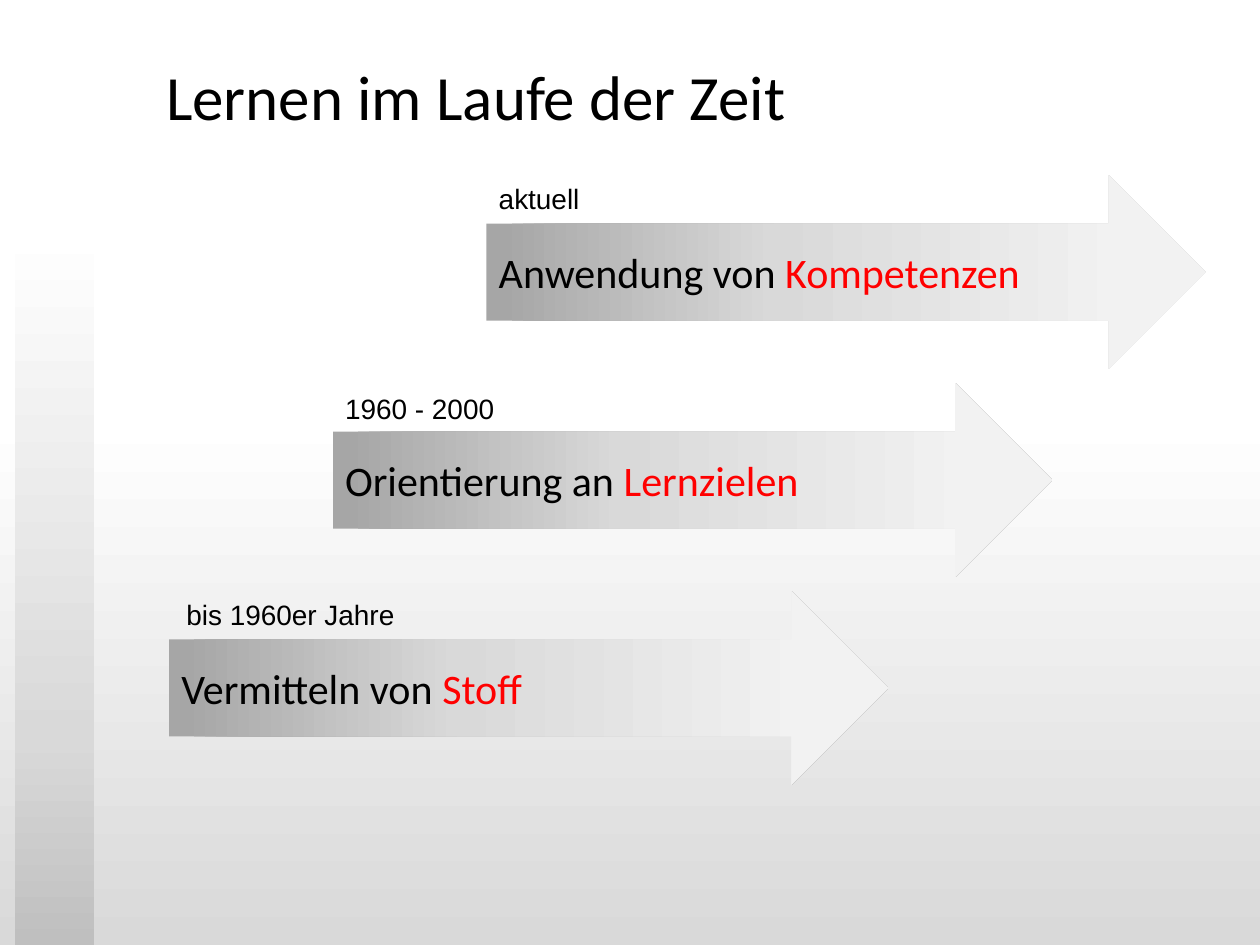
from copy import deepcopy

from pptx import Presentation
from pptx.dml.color import RGBColor
from pptx.enum.shapes import MSO_SHAPE
from pptx.enum.text import MSO_ANCHOR, PP_ALIGN
from pptx.oxml.ns import qn
from pptx.util import Pt

RECTANGLE = MSO_SHAPE.RECTANGLE
RIGHT_ARROW = MSO_SHAPE.RIGHT_ARROW
MIDDLE = MSO_ANCHOR.MIDDLE
TOP = MSO_ANCHOR.TOP
LEFT = PP_ALIGN.LEFT

BLACK = RGBColor(0x00, 0x00, 0x00)
RED = RGBColor(0xFF, 0x00, 0x00)
WHITE = RGBColor(0xFF, 0xFF, 0xFF)
PALE = RGBColor(0xF2, 0xF2, 0xF2)
LIGHT = RGBColor(0xD9, 0xD9, 0xD9)
SILVER = RGBColor(0xBF, 0xBF, 0xBF)
GREY = RGBColor(0xA6, 0xA6, 0xA6)

BACKGROUND_STOPS = [(0, WHITE), (0.44, WHITE), (1, LIGHT)]
BAR_STOPS = [(0.24, WHITE), (0.78, LIGHT), (1, SILVER)]
ARROW_STOPS = [(0.02, GREY), (0.4, LIGHT), (0.89, PALE)]
DOWN, ACROSS = 270, 0

ARROW_TOP, ARROW_STEP = 100.1, 118.8
ARROW_WIDTH, ARROW_HEIGHT = 411.1, 110.9
LABEL_HEIGHT = 26.6

# Each era: arrow left, label left, label top offset, label width, label, lead, keyword
ERAS = [
    (277.9, 277.9, 0, 121.7, "aktuell", "Anwendung von ", "Kompetenzen"),
    (190.1, 190.1, 1.4, 121.7, "1960 - 2000", "Orientierung an ", "Lernzielen"),
    (96.5, 99.4, 0, 150.5, "bis 1960er Jahre", "Vermitteln von ", "Stoff"),
]


def paint_gradient(fill, element, stops, angle):
    """Give the fill found in the element the listed gradient stops."""
    fill.gradient()
    fill.gradient_angle = angle
    gs_list = next(element.iter(qn("a:gsLst")))
    while len(gs_list) < len(stops):
        gs_list.append(deepcopy(gs_list[0]))
    for stop, (position, color) in zip(fill.gradient_stops, stops):
        stop.position = position
        stop.color.rgb = color


def write_runs(sp, runs, font, size, anchor):
    """Write one left-aligned paragraph of (text, colour) runs."""
    tf = sp.text_frame
    tf.word_wrap = True
    tf.vertical_anchor = anchor
    p = tf.paragraphs[0]
    p.alignment = LEFT
    for text, color in runs:
        r = p.add_run()
        r.text = text
        r.font.name = font
        r.font.size = Pt(size)
        r.font.color.rgb = color


def add_text(slide, box, text, font, size, anchor=TOP):
    """Add a black text box in the given box."""
    sp = slide.shapes.add_textbox(*map(Pt, box))
    write_runs(sp, [(text, BLACK)], font, size, anchor)


def add_gradient_shape(slide, kind, box, stops, angle):
    """Add an unlined preset shape with a gradient fill."""
    sp = slide.shapes.add_shape(kind, *map(Pt, box))
    sp.shadow.inherit = False
    sp.line.fill.background()
    paint_gradient(sp.fill, sp.element, stops, angle)
    return sp


def add_era(slide, box, label_box, label, lead, keyword):
    """Add the arrow of one era and its date label."""
    sp = add_gradient_shape(slide, RIGHT_ARROW, box, ARROW_STOPS, ACROSS)
    write_runs(sp, [(lead, BLACK), (keyword, RED)], "Calibri", 24, MIDDLE)
    add_text(slide, label_box, label, "Arial", 16)


def main():
    """Build the slide and save it."""
    prs = Presentation()
    prs.slide_width, prs.slide_height = Pt(720), Pt(540)
    slide = prs.slides.add_slide(prs.slide_layouts[6])
    paint_gradient(slide.background.fill, slide.element, BACKGROUND_STOPS, DOWN)
    add_gradient_shape(slide, RECTANGLE, (8.6, 0, 45.4, 540), BAR_STOPS, DOWN)
    add_text(slide, (87.8, 9.4, 601.2, 90), "Lernen im Laufe der Zeit",
             "Calibri", 36, MIDDLE)
    for i, (left, label_left, offset, label_width, *texts) in enumerate(ERAS):
        top = ARROW_TOP + i * ARROW_STEP
        add_era(slide, (left, top, ARROW_WIDTH, ARROW_HEIGHT),
                (label_left, top + offset, label_width, LABEL_HEIGHT), *texts)
    prs.save("out.pptx")


if __name__ == "__main__":
    main()
